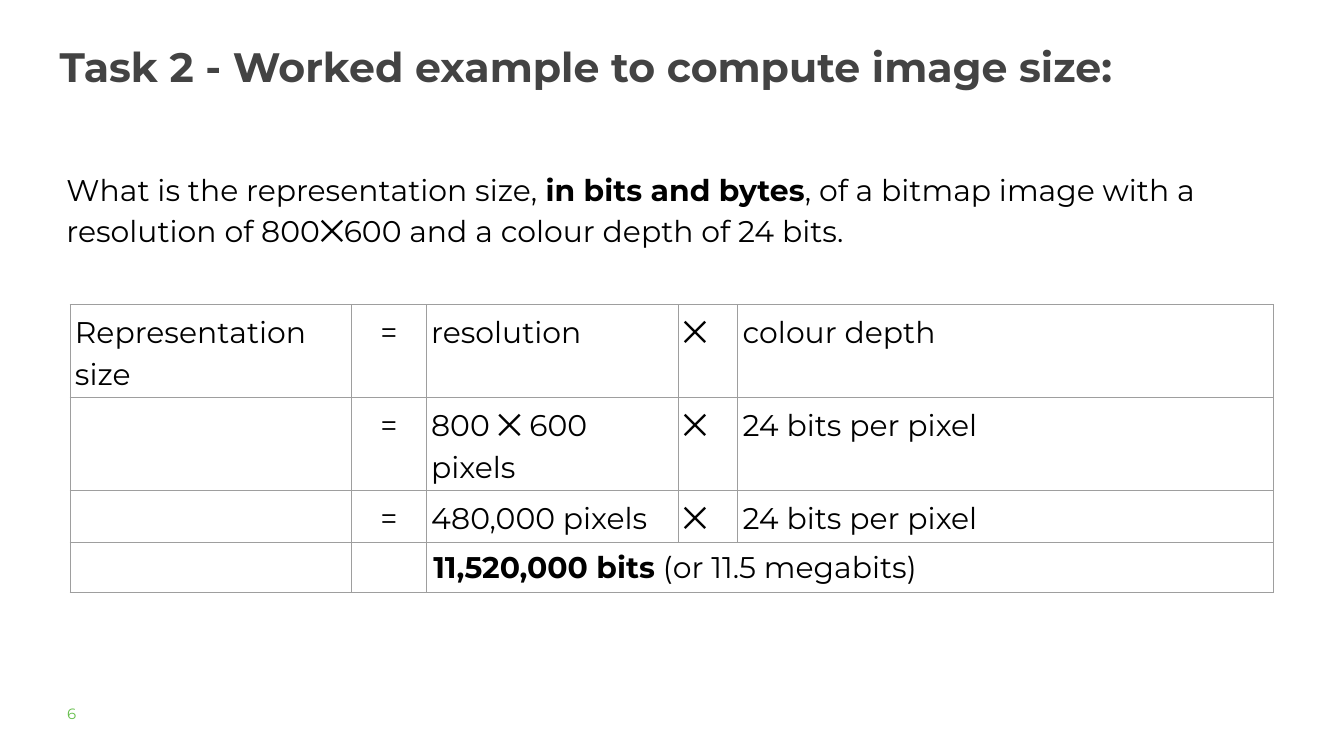
from lxml.etree import SubElement
from pptx import Presentation
from pptx.dml.color import RGBColor
from pptx.enum.text import MSO_ANCHOR, MSO_AUTO_SIZE, PP_ALIGN
from pptx.oxml.ns import qn
from pptx.util import Pt

PX = 9525  # EMU in one px, 96 px to the inch


def px(*sizes):
    return [size * PX for size in sizes]


def color(text):
    return RGBColor.from_string(text)


class Deck:
    """Holds the style and the current slide."""
    font = "Montserrat"
    ink, gray, green, rule = "000000", "434343", "65BE4B", "9E9E9E"
    body = 32
    lead = 1.15

    def __init__(self, width, height):
        self.file = Presentation()
        self.file.slide_width, self.file.slide_height = px(width, height)
        self.slide = self.file.slides.add_slide(self.file.slide_layouts[5])

    def fill(self, frame, runs, size, hue, lead=None, align=PP_ALIGN.LEFT):
        """Fill the first paragraph with (text, bold) runs."""
        frame.word_wrap = True
        para = frame.paragraphs[0]
        para.alignment = align
        if lead:
            para.line_spacing = lead
        for text, bold in runs:
            run = para.add_run()
            run.text = text
            run.font.name = self.font
            run.font.size = Pt(size)
            run.font.bold = bold
            run.font.color.rgb = color(hue)

    def pad(self, frame, inset):
        frame.margin_left = frame.margin_right = inset * PX
        frame.margin_top = frame.margin_bottom = inset * PX

    def title(self, box, runs):
        shape = self.slide.shapes.title
        shape.left, shape.top, shape.width, shape.height = px(*box)
        frame = shape.text_frame
        frame.auto_size = MSO_AUTO_SIZE.NONE
        frame.vertical_anchor = MSO_ANCHOR.TOP
        self.pad(frame, 0)
        self.fill(frame, runs, 44, self.gray, self.lead)

    def text(self, box, runs, size, hue, inset=0, lead=None):
        frame = self.slide.shapes.add_textbox(*px(*box)).text_frame
        self.pad(frame, inset)
        self.fill(frame, runs, size, hue, lead)

    def grid(self, left, top, cols, rows):
        """Add a plain ruled table with the given column and row sizes."""
        frame = self.slide.shapes.add_table(
            len(rows), len(cols), *px(left, top, sum(cols), sum(rows)))
        table = frame.table
        table.first_row = table.horz_banding = False
        for col, width in zip(table.columns, cols):
            col.width = width * PX
        for row, height in zip(table.rows, rows):
            row.height = height * PX
        for cell in table.iter_cells():
            self.pad(cell, 7)
            self.border(cell)
            cell.fill.background()
        return table

    def border(self, cell):
        props = cell._tc.get_or_add_tcPr()
        for side in ("a:lnL", "a:lnR", "a:lnT", "a:lnB"):
            line = SubElement(props, qn(side), w=str(Pt(0.75)))
            fill = SubElement(line, qn("a:solidFill"))
            SubElement(fill, qn("a:srgbClr"), val=self.rule)

    def cell(self, cell, runs, lead=None, align=PP_ALIGN.LEFT):
        self.fill(cell.text_frame, runs, self.body, self.ink, lead, align)

    def save(self):
        self.file.save("out.pptx")


def main():
    deck = Deck(1920, 1080)
    deck.title((85, 49, 1728, 171), [
        ("Task 2 - ", True),
        ("Worked example to compute image size:", True),
    ])
    deck.text((96, 1006, 151, 37), [("6", False)], 16, deck.green)
    deck.text((85, 227, 1750, 152), [
        ("What is the representation size, ", False),
        ("in bits and bytes", True),
        (", of a bitmap image with a resolution of 800⨉600"
         " and a colour depth of 24 bits.", False),
    ], deck.body, deck.ink, inset=10, lead=deck.lead)

    table = deck.grid(100, 435, (402, 107, 360, 85, 765), (133, 133, 74, 70))
    steps = [
        ("Representation size", "=", "resolution", "⨉", "colour depth"),
        ("", "=", "800 ⨉ 600 pixels", "⨉", "24 bits per pixel"),
        ("", "=", "480,000 pixels", "⨉", "24 bits per pixel"),
    ]
    for row, step in enumerate(steps):
        for col, text in enumerate(step):
            if text:
                align = PP_ALIGN.CENTER if text == "=" else PP_ALIGN.LEFT
                deck.cell(table.cell(row, col), [(text, False)], deck.lead, align)

    total = table.cell(3, 2)
    total.merge(table.cell(3, 4))
    deck.pad(total, 10)
    deck.cell(total, [("11,520,000 bits", True), (" (or 11.5 megabits)", False)])
    deck.save()


if __name__ == "__main__":
    main()
